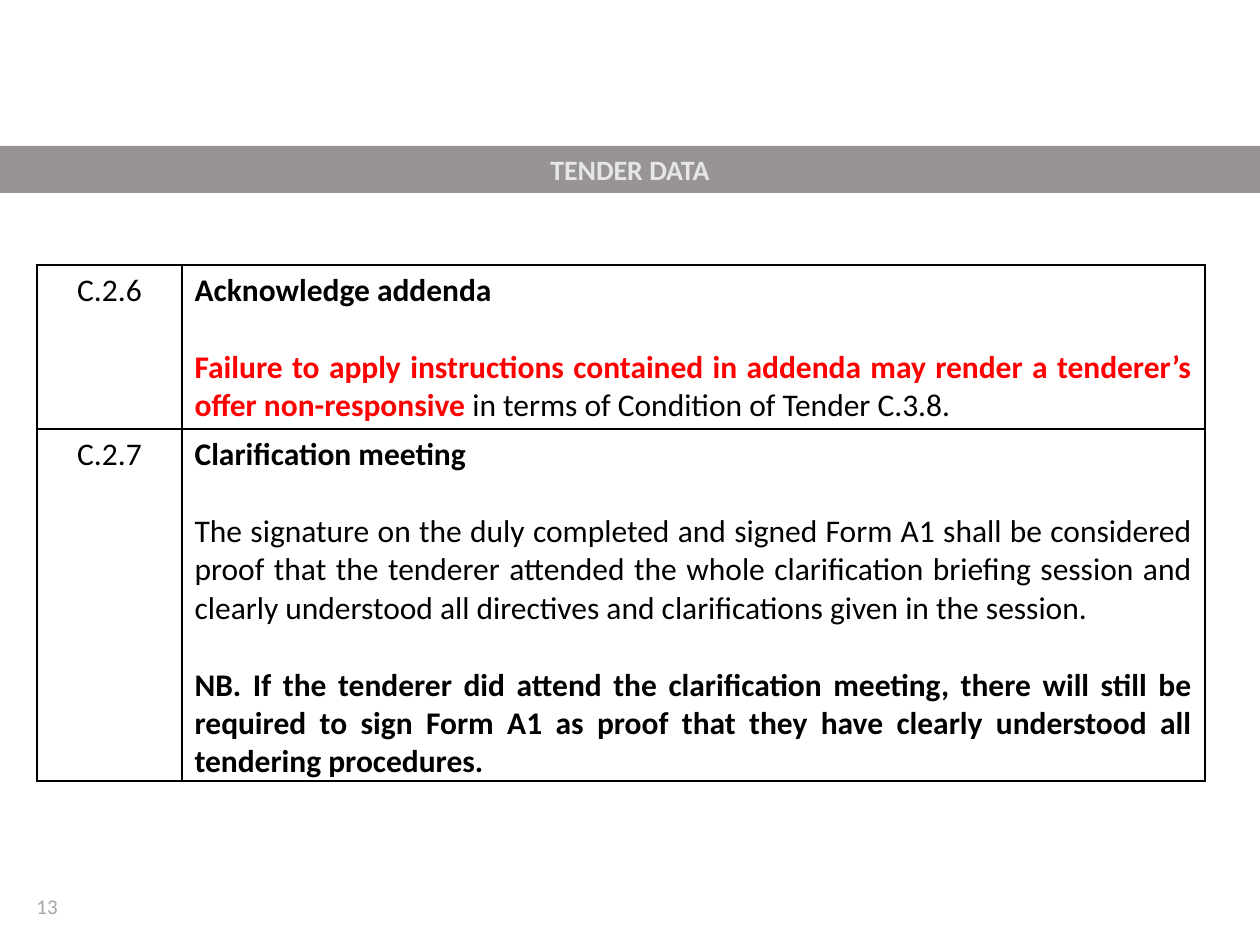
from dataclasses import dataclass

from lxml.etree import SubElement
from pptx import Presentation
from pptx.dml.color import RGBColor
from pptx.enum.text import MSO_ANCHOR as ANCHOR, MSO_AUTO_SIZE as AUTO_SIZE, PP_ALIGN as ALIGN
from pptx.oxml.ns import qn
from pptx.util import Emu, Pt


@dataclass(frozen=True)
class Theme:
    font: str = "Calibri"
    black: str = "000000"
    red: str = "FF0000"
    bar: str = "989494"
    title: str = "E7E6E6"
    number: str = "A6A6A6"
    title_size: int = 16
    body_size: int = 18
    number_size: int = 12
    gap: int = 22  # one body line between paragraphs
    border: int = 1


THEME = Theme()

# Content: each clause has paragraphs, each a list of (text, bold, colour) runs
TITLE = "TENDER DATA"
PAGE = "13"
CLAUSES = [
    ("C.2.6", [
        [("Acknowledge addenda", True, THEME.black)],
        [("Failure to apply instructions contained in addenda may render a "
          "tenderer’s offer non-responsive", True, THEME.red),
         (" in terms of Condition of Tender C.3.8.", False, THEME.black)],
    ]),
    ("C.2.7", [
        [("Clarification meeting", True, THEME.black)],
        [("The signature on the duly completed and signed Form A1 shall be "
          "considered proof that the tenderer attended the whole clarification "
          "briefing session and clearly understood all directives and "
          "clarifications given in the session.", False, THEME.black)],
        [("NB. If the tenderer did attend the clarification meeting, there will "
          "still be required to sign Form A1 as proof that they have clearly "
          "understood all tendering procedures.", True, THEME.black)],
    ]),
]

# Layout in px
SLIDE = (1260, 945)
BAR = (0, 146, 1260, 47)
NUMBER = (24, 887, 284, 50)
TABLE_AT = (37, 265)
COLS = (145, 1023)
ROWS = (164, 352)


def px(n):
    return Emu(round(n * 914400 / 126))


def style(p, size, color, bold=False, align=ALIGN.LEFT):
    p.alignment = align
    p.font.name = THEME.font
    p.font.size = Pt(size)
    p.font.bold = bold
    p.font.color.rgb = RGBColor.from_string(color)


def format_cell(cell):
    cell.fill.background()
    cell.margin_bottom = 0
    tc_pr = cell._tc.get_or_add_tcPr()
    for i, side in enumerate(("lnL", "lnR", "lnT", "lnB")):
        ln = tc_pr.makeelement(qn(f"a:{side}"), {"w": str(Pt(THEME.border))})
        fill = SubElement(ln, qn("a:solidFill"))
        SubElement(fill, qn("a:srgbClr"), val=THEME.black)
        tc_pr.insert(i, ln)


def add_title(slide):
    sp = slide.shapes.title
    sp.left, sp.top, sp.width, sp.height = map(px, BAR)
    sp.fill.solid()
    sp.fill.fore_color.rgb = RGBColor.from_string(THEME.bar)
    tf = sp.text_frame
    tf.text = TITLE
    tf.auto_size = AUTO_SIZE.NONE
    tf.vertical_anchor = ANCHOR.MIDDLE
    style(tf.paragraphs[0], THEME.title_size, THEME.title, True, ALIGN.CENTER)


def add_clauses(slide):
    frame = slide.shapes.add_table(len(ROWS), len(COLS), *map(px, (*TABLE_AT, sum(COLS), sum(ROWS))))
    table = frame.table
    table.first_row = table.horz_banding = False
    for column, width in zip(table.columns, COLS):
        column.width = px(width)
    for row, height, (ref, paragraphs) in zip(table.rows, ROWS, CLAUSES):
        row.height = px(height)
        ref_cell, text_cell = row.cells
        format_cell(ref_cell)
        format_cell(text_cell)
        ref_cell.text = ref
        style(ref_cell.text_frame.paragraphs[0], THEME.body_size, THEME.black, align=ALIGN.CENTER)
        tf = text_cell.text_frame
        for i, runs in enumerate(paragraphs):
            p = tf.add_paragraph() if i else tf.paragraphs[0]
            style(p, THEME.body_size, THEME.black, align=ALIGN.JUSTIFY if i else ALIGN.LEFT)
            if i:
                p.space_before = Pt(THEME.gap)
            for text, bold, color in runs:
                r = p.add_run()
                r.text = text
                r.font.bold = bold
                r.font.color.rgb = RGBColor.from_string(color)


def add_number(slide):
    tf = slide.shapes.add_textbox(*map(px, NUMBER)).text_frame
    tf.word_wrap = True
    tf.text = PAGE
    style(tf.paragraphs[0], THEME.number_size, THEME.number)


def main():
    prs = Presentation()
    prs.slide_width, prs.slide_height = map(px, SLIDE)
    slide = prs.slides.add_slide(prs.slide_layouts[5])
    add_number(slide)
    add_title(slide)
    add_clauses(slide)
    prs.save("out.pptx")


if __name__ == "__main__":
    main()
